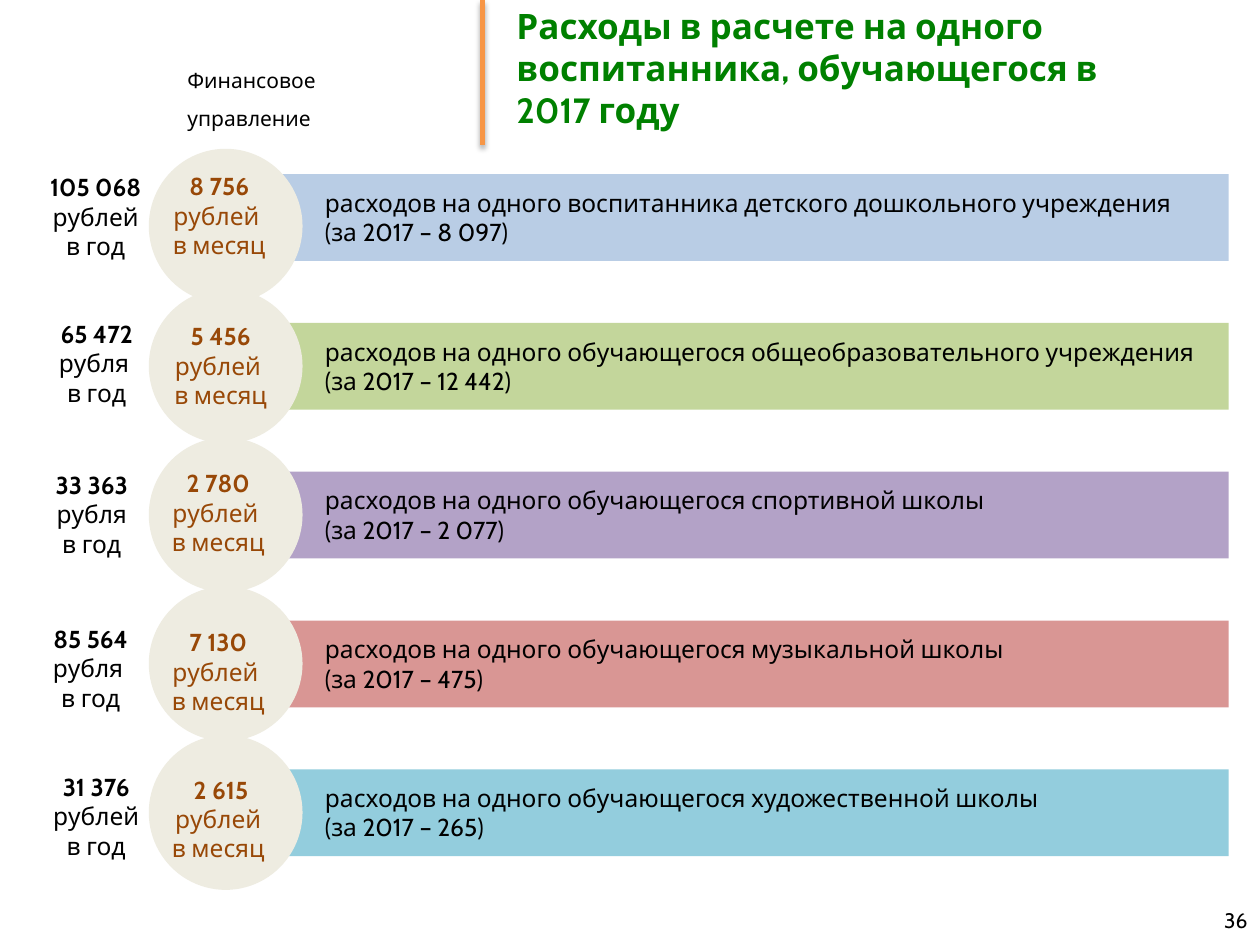
from dataclasses import dataclass

from lxml.etree import SubElement
from pptx import Presentation
from pptx.dml.color import RGBColor
from pptx.enum.shapes import MSO_CONNECTOR, MSO_SHAPE
from pptx.enum.text import MSO_ANCHOR, PP_ALIGN
from pptx.oxml.ns import qn
from pptx.util import Cm, Pt


@dataclass(frozen=True)
class Theme:
    font: str = "Cabin"
    black: str = "000000"
    title: str = "008000"
    monthly: str = "984807"
    circle: str = "EEECE1"
    divider: str = "F79646"
    title_size: int = 20
    body_size: int = 14
    small_size: int = 12


@dataclass(frozen=True)
class Expense:
    color: str
    description: tuple
    yearly: tuple
    yearly_at: tuple
    monthly: tuple
    monthly_at: tuple
    circle_top: float


THEME = Theme()
DEPARTMENT = "Финансовое управление"
TITLE = "Расходы в расчете на одного воспитанника, обучающегося в 2017 году"
PAGE_NUMBER = "36"
EXPENSES = [
    Expense("B9CDE5",
            ("расходов на одного воспитанника детского дошкольного учреждения", "(за 2017 – 8 097)"),
            ("105 068", "рублей", "в год"), (0.58, 3.35),
            ("8 756", "рублей ", "в месяц"), (3.07, 3.33), 3.0),
    Expense("C3D69B",
            ("расходов на одного обучающегося общеобразовательного учреждения", "(за 2017 – 12 442)"),
            ("65 472", "рубля ", "в год"), (0.6, 6.3),
            ("5 456", "рублей ", "в месяц"), (3.1, 6.35), 5.82),
    Expense("B3A2C7",
            ("расходов на одного обучающегося спортивной школы", "(за 2017 – 2 077)"),
            ("33 363", "рубля", "в год"), (0.5, 9.35),
            ("2 780", "рублей ", "в месяц"), (3.05, 9.32), 8.82),
    Expense("D99694",
            ("расходов на одного обучающегося музыкальной школы", "(за 2017 – 475)"),
            ("85 564", "рубля ", "в год"), (0.48, 12.45),
            ("7 130", "рублей ", "в месяц"), (3.05, 12.52), 11.82),
    Expense("93CDDD",
            ("расходов на одного обучающегося художественной школы", "(за 2017 – 265)"),
            ("31 376", "рублей", "в год"), (0.59, 15.44),
            (" 2 615", "рублей", "в месяц"), (3.05, 15.49), 14.82),
]
FIRST_BAR_TOP, ROW_PITCH = 3.51, 3.0
DESCRIPTION_OFFSET = 0.15
LABEL_WIDTH, LABEL_HEIGHT = 2.7, 2.06


def add_text(page, lines, area, size, color=THEME.black, bold_lines=0,
             align=PP_ALIGN.LEFT, anchor=MSO_ANCHOR.TOP, spacing=None):
    box = page.shapes.add_textbox(*map(Cm, area))
    frame = box.text_frame
    frame.word_wrap = True
    frame.vertical_anchor = anchor
    for index, line in enumerate(lines):
        para = frame.add_paragraph() if index else frame.paragraphs[0]
        para.alignment = align
        if spacing:
            para.line_spacing = spacing
        span = para.add_run()
        span.text = line
        span.font.name = THEME.font
        span.font.size = Pt(size)
        span.font.bold = index < bold_lines
        span.font.color.rgb = RGBColor.from_string(color)


def add_filled(page, preset, area, color):
    shape = page.shapes.add_shape(preset, *map(Cm, area))
    shape.shadow.inherit = False
    shape.fill.solid()
    shape.fill.fore_color.rgb = RGBColor.from_string(color)
    shape.line.fill.background()


def add_divider(page):
    divider = page.shapes.add_connector(
        MSO_CONNECTOR.STRAIGHT, Cm(9.73), Cm(0), Cm(9.73), Cm(2.92))
    divider.line.color.rgb = RGBColor.from_string(THEME.divider)
    divider.line.width = Pt(3)
    effects = SubElement(divider.element.spPr, qn("a:effectLst"))
    shadow = SubElement(effects, qn("a:outerShdw"), blurRad=str(Pt(3.1)),
                        dist=str(Pt(1.8)), dir="5400000", rotWithShape="0")
    shade = SubElement(shadow, qn("a:srgbClr"), val=THEME.black)
    SubElement(shade, qn("a:alpha"), val="35000")


def add_expense(page, row, expense):
    top = FIRST_BAR_TOP + row * ROW_PITCH
    add_filled(page, MSO_SHAPE.RECTANGLE, (5.49, top, 19.28, 1.75), expense.color)
    add_text(page, expense.description, (6.3, top + DESCRIPTION_OFFSET, 18.6, 1.45),
             THEME.body_size)
    add_filled(page, MSO_SHAPE.OVAL, (3, expense.circle_top, 3.1, 3.12), THEME.circle)
    for lines, corner, color in (
            (expense.yearly, expense.yearly_at, THEME.black),
            (expense.monthly, expense.monthly_at, THEME.monthly)):
        add_text(page, lines, (*corner, LABEL_WIDTH, LABEL_HEIGHT), THEME.body_size,
                 color, bold_lines=1, align=PP_ALIGN.CENTER)


def main():
    """Build the slide on spending per pupil and save it."""
    deck = Presentation()
    deck.slide_width, deck.slide_height = Cm(25.4), Cm(19.05)
    page = deck.slides.add_slide(deck.slide_layouts[6])
    add_text(page, [DEPARTMENT], (3.53, 0.99, 5.33, 0.91), THEME.small_size, spacing=1.5)
    add_divider(page)
    add_text(page, [TITLE], (10.16, 0.08, 12.4, 2.57), THEME.title_size, THEME.title,
             bold_lines=1, anchor=MSO_ANCHOR.MIDDLE)
    for row, expense in enumerate(EXPENSES):
        add_expense(page, row, expense)
    add_text(page, [PAGE_NUMBER], (19.48, 18.03, 5.92, 1.02), THEME.small_size,
             align=PP_ALIGN.RIGHT, anchor=MSO_ANCHOR.MIDDLE)
    deck.save("out.pptx")


if __name__ == "__main__":
    main()
